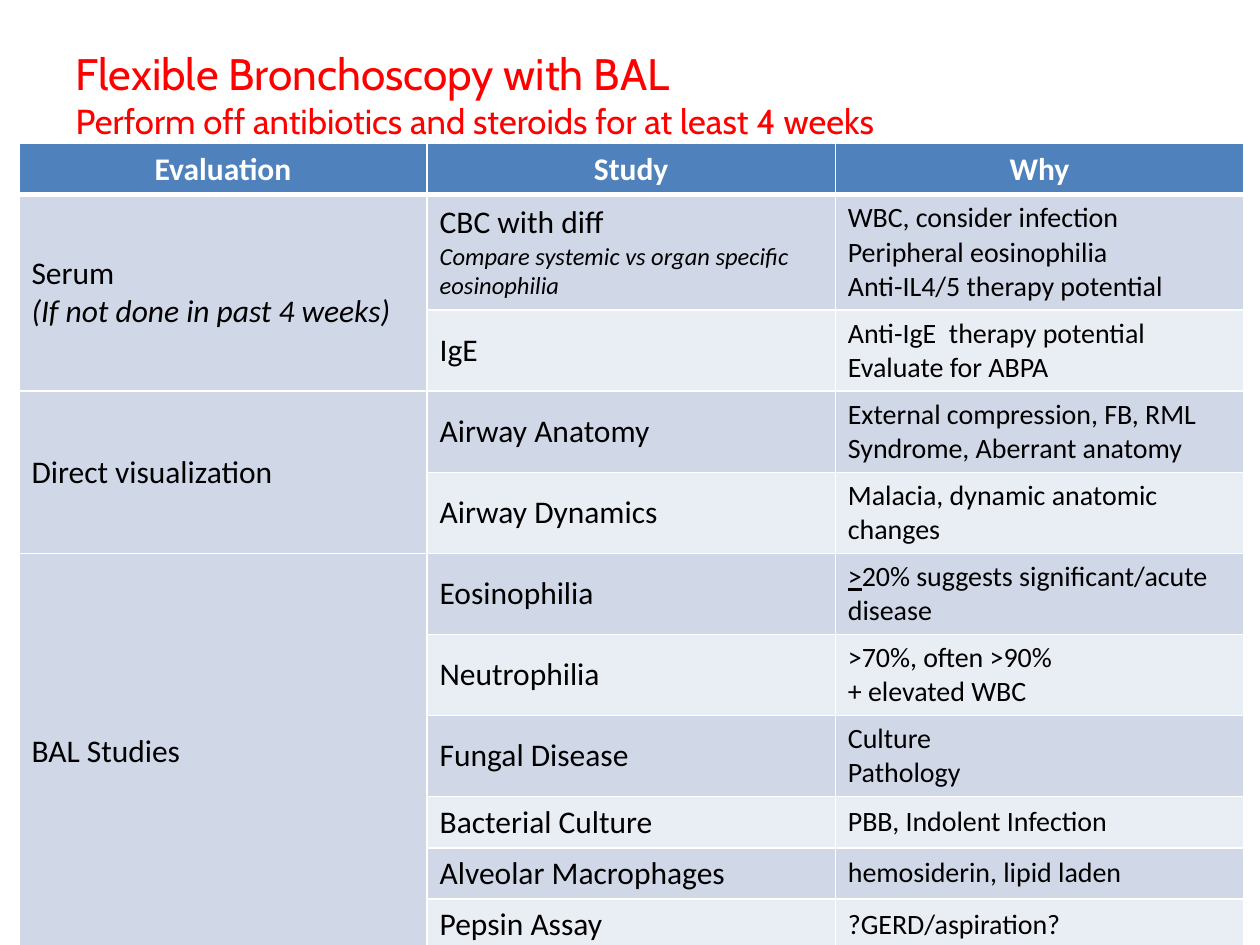
import dataclasses

import pptx
import pptx.dml.color
import pptx.enum.text
import pptx.oxml
import pptx.oxml.ns
import pptx.util

Inches = pptx.util.Inches
Pt = pptx.util.Pt
RGBColor = pptx.dml.color.RGBColor

RED = RGBColor(0xFF, 0x00, 0x00)
BLACK = RGBColor(0x00, 0x00, 0x00)
WHITE = RGBColor(0xFF, 0xFF, 0xFF)
HEADER_BLUE = RGBColor(0x4F, 0x81, 0xBD)
BAND_DARK = RGBColor(0xD0, 0xD8, 0xE8)
BAND_LIGHT = RGBColor(0xE9, 0xED, 0xF4)


@dataclasses.dataclass
class Run:
    text: str
    size: float = 0  # 0 takes the size of the column
    italic: bool = False
    underline: bool = False


TITLE = [
    Run("Flexible Bronchoscopy with BAL", 25.2),
    Run("Perform off antibiotics and steroids for at least 4 weeks", 19.8),
]
HEADERS = ["Evaluation", "Study", "Why"]

# A cell is a list of paragraphs; a paragraph is a string or a list of runs.
# Each evaluation holds its (study, why) rows.
EVALUATIONS = [
    (["Serum", [Run("(If not done in past 4 weeks)", italic=True)]], [
        (["CBC with diff",
          [Run("Compare systemic vs organ specific eosinophilia", 14, italic=True)]],
         ["WBC, consider infection", "Peripheral eosinophilia",
          "Anti-IL4/5 therapy potential"]),
        (["IgE"], ["Anti-IgE  therapy potential", "Evaluate for ABPA"]),
    ]),
    (["Direct visualization"], [
        (["Airway Anatomy"],
         ["External compression, FB, RML Syndrome, Aberrant anatomy"]),
        (["Airway Dynamics"], ["Malacia, dynamic anatomic changes"]),
    ]),
    (["BAL Studies"], [
        (["Eosinophilia"],
         [[Run(">", underline=True), Run("20% suggests significant/acute disease")]]),
        (["Neutrophilia"], [">70%, often >90%", "+ elevated WBC"]),
        (["Fungal Disease"], ["Culture", "Pathology"]),
        (["Bacterial Culture"], ["PBB, Indolent Infection"]),
        (["Alveolar Macrophages"], ["hemosiderin, lipid laden"]),
        (["Pepsin Assay"], ["?GERD/aspiration?"]),
    ]),
]
ROW_HEIGHTS = [0.38, 0.84] + [0.59] * 6 + [0.38] * 3
COLUMN_WIDTH = 3.24
COLUMN_SIZES = [18, 18, 16]


class SlideBuilder:
    title_font = "Cabin"
    body_font = "Calibri"

    def __init__(self, presentation):
        self.slide = presentation.slides.add_slide(presentation.slide_layouts[5])

    def add_run(self, paragraph, content, font_name, size, color, bold=False):
        run = paragraph.add_run()
        run.text = content.text
        font = run.font
        font.name = font_name
        font.size = Pt(content.size or size)
        font.color.rgb = color
        font.bold = bold
        font.italic = content.italic
        font.underline = content.underline

    def add_title(self, lines, left, top, width, height):
        title = self.slide.shapes.title
        title.left, title.top = Inches(left), Inches(top)
        title.width, title.height = Inches(width), Inches(height)
        frame = title.text_frame
        frame.word_wrap = True
        frame.auto_size = pptx.enum.text.MSO_AUTO_SIZE.NONE
        frame.vertical_anchor = pptx.enum.text.MSO_ANCHOR.TOP
        frame.margin_top = Inches(0.07)
        paragraph = frame.paragraphs[0]
        paragraph.alignment = pptx.enum.text.PP_ALIGN.LEFT
        for index, line in enumerate(lines):
            if index:
                paragraph.add_line_break()
            self.add_run(paragraph, line, self.title_font, line.size, RED)

    def add_table(self, row_heights, columns, column_width, left, top):
        frame = self.slide.shapes.add_table(
            len(row_heights), columns, Inches(left), Inches(top),
            Inches(column_width * columns), Inches(sum(row_heights)))
        table = frame.table
        table.first_row = table.horz_banding = False
        for column in table.columns:
            column.width = Inches(column_width)
        for row, height in zip(table.rows, row_heights):
            row.height = Inches(height)
        return table

    def style_cell(self, cell, fill, top=1, bottom=1):
        properties = cell._tc.get_or_add_tcPr()
        for side, width in (("L", 1), ("R", 1), ("T", top), ("B", bottom)):
            properties.append(pptx.oxml.parse_xml(
                f'<a:ln{side} {pptx.oxml.ns.nsdecls("a")} w="{Pt(width)}">'
                f'<a:solidFill><a:srgbClr val="{WHITE}"/></a:solidFill></a:ln{side}>'))
        cell.fill.solid()
        cell.fill.fore_color.rgb = fill
        cell.vertical_anchor = pptx.enum.text.MSO_ANCHOR.MIDDLE

    def fill_cell(self, cell, paragraphs, size, color=BLACK, header=False):
        frame = cell.text_frame
        for index, runs in enumerate(paragraphs):
            paragraph = frame.add_paragraph() if index else frame.paragraphs[0]
            if header:
                paragraph.alignment = pptx.enum.text.PP_ALIGN.CENTER
            for run in [Run(runs)] if isinstance(runs, str) else runs:
                self.add_run(paragraph, run, self.body_font, size, color, header)


def main():
    presentation = pptx.Presentation()
    presentation.slide_width, presentation.slide_height = Inches(10), Inches(7.5)
    builder = SlideBuilder(presentation)

    # Title
    builder.add_title(TITLE, 0.5, 0.3, 9, 1.25)

    # Table header
    table = builder.add_table(ROW_HEIGHTS, len(HEADERS), COLUMN_WIDTH, 0.15, 1.14)
    for column, text in enumerate(HEADERS):
        cell = table.cell(0, column)
        builder.style_cell(cell, HEADER_BLUE, bottom=3)
        builder.fill_cell(cell, [text], 18, WHITE, header=True)

    # Evaluations, each merged over its studies
    row = 1
    for evaluation, studies in EVALUATIONS:
        first_row = row
        for study, why in studies:
            band = BAND_DARK if row % 2 else BAND_LIGHT
            for column, fill in enumerate((BAND_DARK, band, band)):
                builder.style_cell(table.cell(row, column), fill,
                                   top=3 if row == 1 else 1)
            builder.fill_cell(table.cell(row, 1), study, COLUMN_SIZES[1])
            builder.fill_cell(table.cell(row, 2), why, COLUMN_SIZES[2])
            row += 1
        group = table.cell(first_row, 0)
        group.merge(table.cell(row - 1, 0))
        builder.fill_cell(group, evaluation, COLUMN_SIZES[0])

    presentation.save("out.pptx")


if __name__ == "__main__":
    main()
